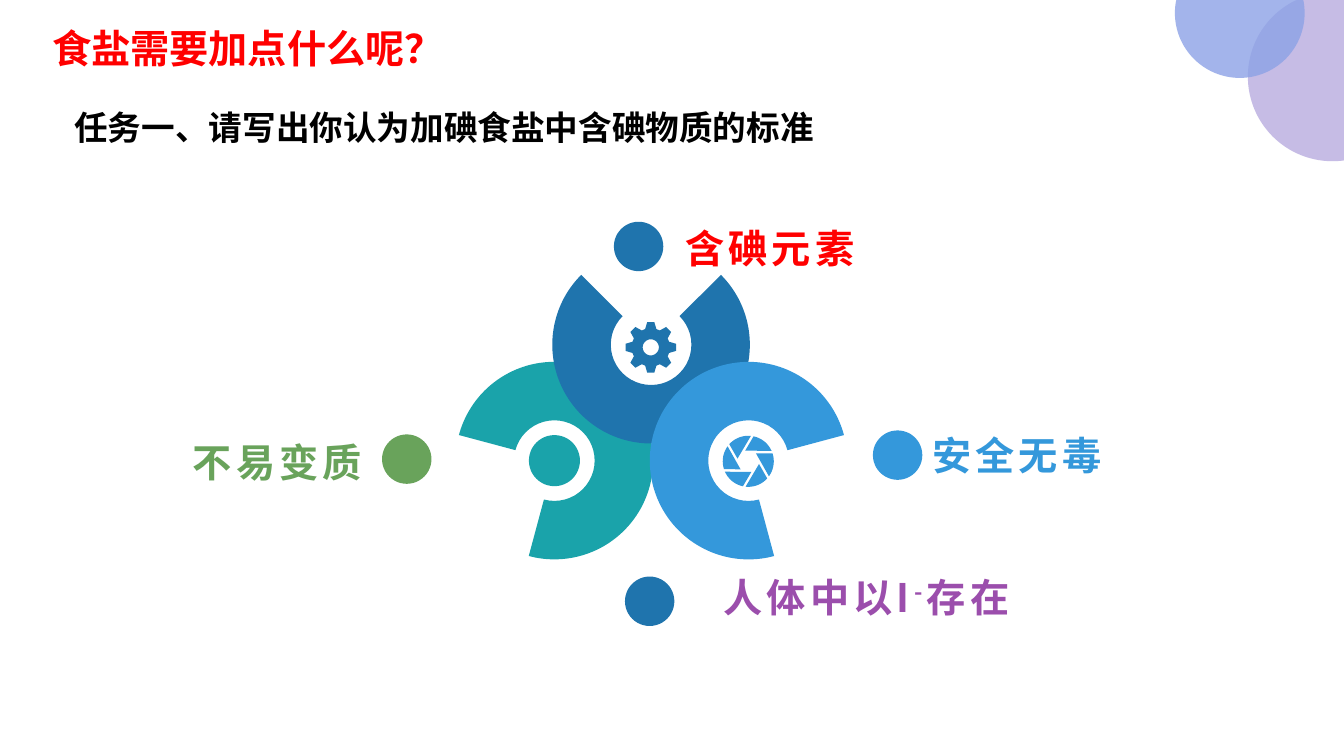
from math import cos, radians, sin

from lxml import etree
from pptx import Presentation
from pptx.dml.color import RGBColor
from pptx.enum.shapes import MSO_SHAPE
from pptx.enum.text import MSO_ANCHOR, PP_ALIGN
from pptx.oxml.ns import qn
from pptx.util import Emu, Pt

CIRCLE, RING = MSO_SHAPE.OVAL, MSO_SHAPE.BLOCK_ARC
BOTTOM, LEFT, RIGHT = MSO_ANCHOR.BOTTOM, PP_ALIGN.LEFT, PP_ALIGN.RIGHT

COLUMNS, ROWS = 40, 22.5
CELL = 304800
CJK_FONT = "Noto Sans CJK SC"

RED, BLACK, PURPLE, GREEN = "FF0000", "000000", "9B4EAC", "69A35B"
TEAL, NAVY, SKY = "1AA3AA", "1F74AD", "3498DB"

PETAL_RADIUS, PETAL_BAND, HALF_GAP = 2.94, 0.296, 45
ICON_RADIUS, DOT_SIZE = 0.76, 1.47


def grid(*cells):
    return [Emu(round(cell * CELL)) for cell in cells]


def rgb(color):
    return RGBColor.from_string(color)


def paint(shape, color, opacity=100):
    shape.shadow.inherit = False
    shape.fill.solid()
    shape.fill.fore_color.rgb = rgb(color)
    shape.line.fill.background()
    if opacity < 100:
        tint = shape.fill._xPr.find(qn("a:solidFill"))[0]
        etree.SubElement(tint, qn("a:alpha"), val=str(opacity * 1000))


def polar(center, radius, angle):
    x, y = center
    return x + radius * cos(radians(angle)), y + radius * sin(radians(angle))


def arc(center, radius, start, end, step):
    return [polar(center, radius, angle) for angle in range(start, end + 1, step)]


def add_outline(slide, contours, color, opacity=100):
    builder = slide.shapes.build_freeform(*grid(*contours[0][0]))
    for number, contour in enumerate(contours):
        points = [grid(*point) for point in contour]
        if number:
            builder.move_to(*points[0])
        builder.add_line_segments(points[1:], close=True)
    paint(builder.convert_to_shape(), color, opacity)


def add_corner_circle(slide, center, radius, color, opacity):
    visible = [(min(x, COLUMNS), max(y, 0)) for x, y in arc(center, radius, 0, 358, 2)]
    add_outline(slide, [visible], color, opacity)


def add_disc(slide, left, top, size, color):
    paint(slide.shapes.add_shape(CIRCLE, *grid(left, top, size, size)), color)


def add_petal(slide, center, gap_angle, color):
    left, top = (value - PETAL_RADIUS for value in center)
    size = 2 * PETAL_RADIUS
    petal = slide.shapes.add_shape(RING, *grid(left, top, size, size))
    start, end = ((gap_angle + turn) % 360 for turn in (HALF_GAP, -HALF_GAP))
    for index, value in enumerate((start * 0.6, end * 0.6, PETAL_BAND)):
        petal.adjustments[index] = value
    paint(petal, color)


def add_gear(slide, center, color):
    tooth = ((0.57, -17), (ICON_RADIUS, -8), (ICON_RADIUS, 8), (0.57, 17))
    rim = [polar(center, radius, turn + angle)
           for turn in range(0, 360, 45) for radius, angle in tooth]
    add_outline(slide, [rim, arc(center, 0.24, 0, 350, 10)], color)


def add_shutter(slide, center, color):
    blades = [arc(center, ICON_RADIUS, turn - 78, turn - 24, 6)
              + [polar(center, 0.33, turn - 106)] for turn in range(0, 360, 60)]
    add_outline(slide, blades, color)


def add_text(slide, box, runs, color, size, latin, spacing=0, align=LEFT, frame_format=None):
    frame = slide.shapes.add_textbox(*grid(*box)).text_frame
    frame.word_wrap = True
    for name, value in (frame_format or {}).items():
        setattr(frame, name, value)
    paragraph = frame.paragraphs[0]
    paragraph.alignment = align
    if spacing:
        paragraph.line_spacing = 1.2
    for words, baseline in runs:
        run = paragraph.add_run()
        run.text = words
        for name, value in {"size": Pt(size), "bold": True, "name": latin}.items():
            setattr(run.font, name, value)
        run.font.color.rgb = rgb(color)
        properties = run._r.get_or_add_rPr()
        etree.SubElement(properties, qn("a:ea"), typeface=CJK_FONT)
        if spacing:
            properties.set("spc", str(spacing * 100))
        if baseline:
            properties.set("baseline", str(baseline * 1000))


def add_heading(slide, box, words, color, size):
    add_text(slide, box, [(words, 0)], color, size, "Arial")


def add_label(slide, box, runs, color, align=LEFT):
    add_text(slide, box, runs, color, 28, CJK_FONT, 3, align,
             {"vertical_anchor": BOTTOM, "margin_bottom": 0})


def main():
    deck = Presentation()
    deck.slide_width, deck.slide_height = grid(COLUMNS, ROWS)
    slide = deck.slides.add_slide(deck.slide_layouts[6])

    add_corner_circle(slide, (39.66, 2.28), 2.52, "A595D7", 63)
    add_corner_circle(slide, (36.9, 0.39), 1.93, "8CA2E6", 80)

    add_heading(slide, (1.26, 0.57, 12, 1.71), "食盐需要加点什么呢？", RED, 28)
    add_heading(slide, (1.92, 3.03, 29.19, 2.73),
                "任务一、请写出你认为加碘食盐中含碘物质的标准", BLACK, 24)

    for center, gap_angle, color in (
        ((16.5, 13.71), 150, TEAL),
        ((19.38, 10.26), 270, NAVY),
        ((22.28, 13.71), 30, SKY),
    ):
        add_petal(slide, center, gap_angle, color)

    add_disc(slide, 16.5 - ICON_RADIUS, 13.71 - ICON_RADIUS, 2 * ICON_RADIUS, TEAL)
    add_gear(slide, (19.37, 10.34), NAVY)
    add_shutter(slide, (22.27, 13.73), SKY)

    for left, top, color in (
        (18.27, 6.6, NAVY),
        (11.37, 12.93, GREEN),
        (25.98, 12.81, SKY),
        (18.6, 17.16, NAVY),
    ):
        add_disc(slide, left, top, DOT_SIZE, color)

    for box, runs, color, align in (
        ((20.1, 6.6, 9.15, 1.47), [("含碘元素", 0)], RED, LEFT),
        ((1.92, 12.96, 9.15, 1.47), [("不易变质", 0)], GREEN, RIGHT),
        ((27.45, 12.78, 9.15, 1.47), [("安全无毒", 0)], SKY, LEFT),
        ((21.24, 17.31, 11.04, 1.14),
         [("人体中以I", 0), ("-", 30), ("存在", 0)], PURPLE, LEFT),
    ):
        add_label(slide, box, runs, color, align)

    deck.save("out.pptx")


if __name__ == "__main__":
    main()
